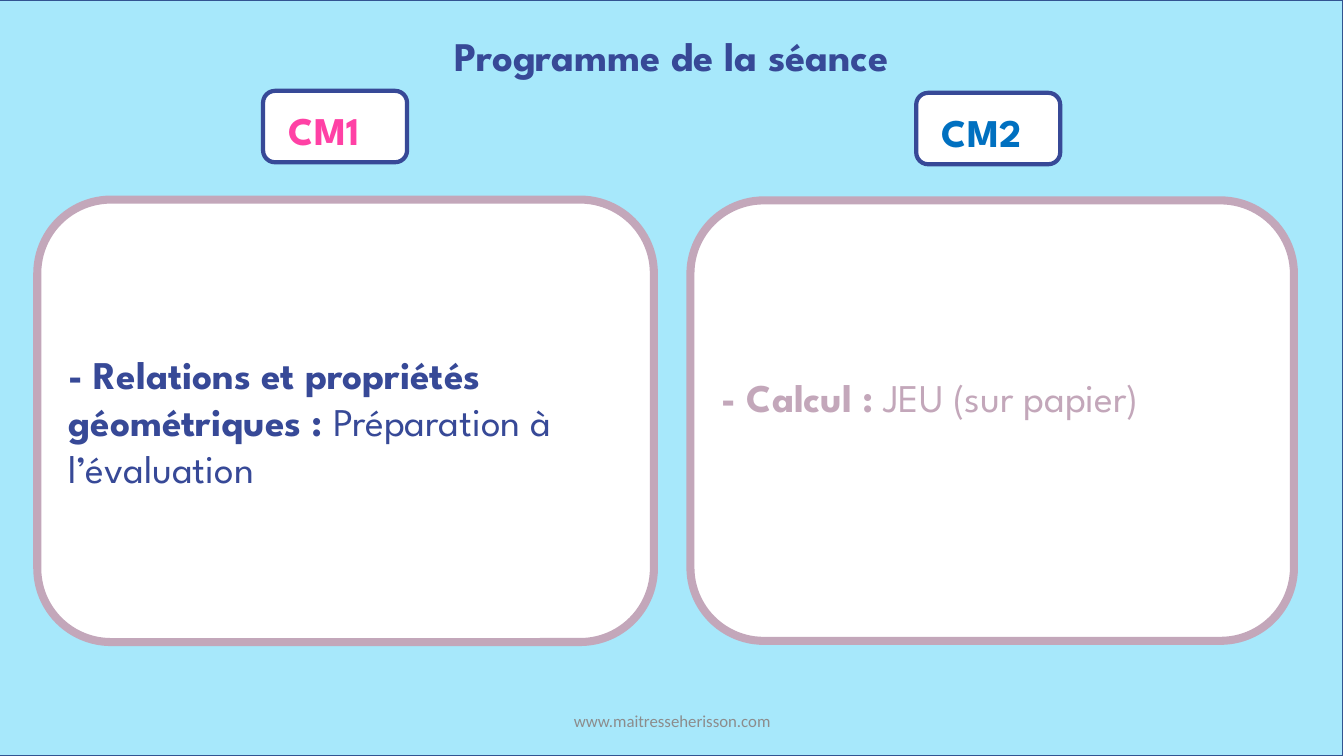
from pptx import Presentation
from pptx.dml.color import RGBColor
from pptx.enum.shapes import MSO_SHAPE
from pptx.enum.text import MSO_ANCHOR, MSO_AUTO_SIZE, PP_ALIGN
from pptx.util import Cm, Pt

RECTANGLE = MSO_SHAPE.RECTANGLE
ROUNDED = MSO_SHAPE.ROUNDED_RECTANGLE
TOP, MIDDLE = MSO_ANCHOR.TOP, MSO_ANCHOR.MIDDLE
LEFT, CENTER = PP_ALIGN.LEFT, PP_ALIGN.CENTER
GROW = MSO_AUTO_SIZE.SHAPE_TO_FIT_TEXT

SKY = RGBColor(0xA7, 0xE8, 0xFB)
EDGE = RGBColor(0x32, 0x54, 0x91)
WHITE = RGBColor(0xFF, 0xFF, 0xFF)
NAVY = RGBColor(0x37, 0x49, 0x97)
MAUVE = RGBColor(0xC3, 0xA7, 0xBA)
PINK = RGBColor(0xFF, 0x41, 0xA5)
BLUE = RGBColor(0x00, 0x70, 0xC0)
GREY = RGBColor(0x8C, 0x8C, 0x8C)

HEADING_FONT = "League Spartan"
FOOTER_FONT = "Calibri"
TITLE_ONLY = 5
WIDTH, HEIGHT = Cm(33.87), Cm(19.05)


def style_font(font, name, size, color, bold=None):
    font.name = name
    font.size = Pt(size)
    font.color.rgb = color
    font.bold = bold


def add_outlined(shapes, kind, left, top, width, height, fill, line, weight):
    box = shapes.add_shape(kind, left, top, width, height)
    box.shadow.inherit = False
    box.fill.solid()
    box.fill.fore_color.rgb = fill
    box.line.color.rgb = line
    box.line.width = Pt(weight)
    return box


def write_line(box, text, name, size, color, bold=None, align=LEFT, anchor=TOP):
    frame = box.text_frame
    frame.word_wrap = True
    frame.vertical_anchor = anchor
    para = frame.paragraphs[0]
    para.text = text
    para.alignment = align
    style_font(para.font, name, size, color, bold)


def add_title(page, text):
    title = page.shapes.title
    title.left, title.top, title.width, title.height = Cm(0), Cm(0.66), WIDTH, Cm(1.5)
    write_line(title, text, HEADING_FONT, 29, NAVY, True, CENTER)
    title.text_frame.auto_size = GROW
    return title


def add_badge(page, left, top, text, color):
    shapes = page.shapes.add_group_shape().shapes
    add_outlined(shapes, ROUNDED, left, top, Cm(3.63), Cm(1.8), WHITE, NAVY, 3)
    label = shapes.add_textbox(left + Cm(0.4), top + Cm(0.26), Cm(2.8), Cm(1.45))
    write_line(label, text, HEADING_FONT, 28, color, True)
    label.text_frame.auto_size = GROW


def add_panel(page, left, top, width, height, topic, detail, color):
    panel = add_outlined(page.shapes, ROUNDED, left, top, width, height, WHITE, MAUVE, 5.75)
    frame = panel.text_frame
    frame.word_wrap = True
    frame.vertical_anchor = MIDDLE
    para = frame.paragraphs[0]
    para.alignment = LEFT
    style_font(para.font, HEADING_FONT, 28, color)
    for text, bold in ((topic, True), (detail, False)):
        span = para.add_run()
        span.text = text
        style_font(span.font, HEADING_FONT, 28, color, bold)
    return panel


def add_footer(page, text):
    footer = page.shapes.add_textbox(Cm(11.23), Cm(17.65), Cm(11.43), Cm(1.02))
    write_line(footer, text, FOOTER_FONT, 12, GREY, align=CENTER, anchor=MIDDLE)


def main():
    deck = Presentation()
    deck.slide_width, deck.slide_height = WIDTH, HEIGHT
    page = deck.slides.add_slide(deck.slide_layouts[TITLE_ONLY])

    title = add_title(page, "Programme de la séance")
    backdrop = add_outlined(page.shapes, RECTANGLE, Cm(-0.03), 0, WIDTH, HEIGHT, SKY, EDGE, 1)
    title.element.addprevious(backdrop.element)

    add_badge(page, Cm(6.63), Cm(2.29), "CM1", PINK)
    add_badge(page, Cm(23.09), Cm(2.34), "CM2", BLUE)
    add_panel(page, Cm(0.94), Cm(5.03), Cm(15.54), Cm(11.15),
              "- Relations et propriétés géométriques : ", "Préparation à l’évaluation", NAVY)
    calcul = add_panel(page, Cm(17.4), Cm(5.05), Cm(15.21), Cm(11.1),
                       "- Calcul : ", "JEU (sur papier)", MAUVE)
    calcul.text_frame.margin_bottom = Cm(1.31)
    add_footer(page, "www.maitresseherisson.com")

    deck.save("out.pptx")


if __name__ == "__main__":
    main()
